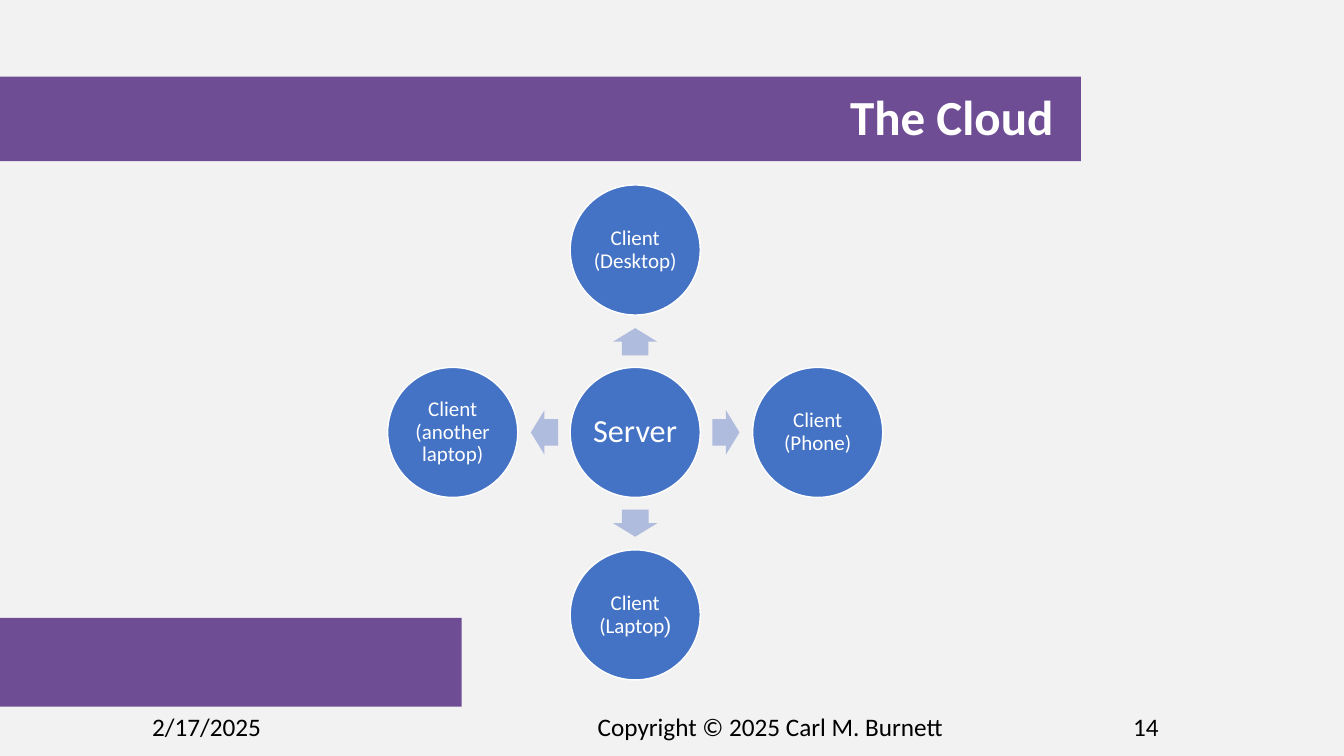
import math
import pptx
import pptx.util
import pptx.dml.color
import pptx.enum.shapes
import pptx.enum.text

Inches = pptx.util.Inches
Pt = pptx.util.Pt
Kind = pptx.enum.shapes.MSO_SHAPE
Align = pptx.enum.text.PP_ALIGN
Anchor = pptx.enum.text.MSO_ANCHOR
hues = {"back": "F2F2F2", "band": "6E4D94", "disc": "4472C4",
        "arrow": "B0BCDE", "white": "FFFFFF", "black": "000000"}


def draw(kind, x, y, w, h, hue):
    shape = slide.shapes.add_shape(kind, Inches(x), Inches(y), Inches(w), Inches(h))
    shape.shadow.inherit = False
    shape.fill.solid()
    shape.fill.fore_color.rgb = pptx.dml.color.RGBColor.from_string(hues[hue])
    shape.line.fill.background()
    return shape


def write(para, text, size, hue, face="Calibri"):
    run = para.add_run()
    run.text = text
    run.font.size = Pt(size)
    run.font.name = face
    run.font.color.rgb = pptx.dml.color.RGBColor.from_string(hues[hue])
    return run


deck = pptx.Presentation()
deck.slide_width, deck.slide_height = Inches(13.33), Inches(7.5)
slide = deck.slides.add_slide(deck.slide_layouts[5])
slide.background.fill.solid()
slide.background.fill.fore_color.rgb = pptx.dml.color.RGBColor.from_string(hues["back"])

# Bands and title
draw(Kind.RECTANGLE, 0, 6.13, 4.58, 0.88, "band")
band = draw(Kind.RECTANGLE, 0, 0.76, 10.72, 0.84, "band")
title = slide.shapes.title
band._element.addnext(title._element)
title.left, title.top = Inches(1.72), Inches(0.89)
title.width, title.height = Inches(8.83), Inches(0.59)
frame = title.text_frame
frame.auto_size = pptx.enum.text.MSO_AUTO_SIZE.NONE
frame.vertical_anchor = Anchor.MIDDLE
para = frame.paragraphs[0]
para.alignment = Align.RIGHT
para.line_spacing = 0.9
write(para, "The Cloud", 35, "white").font.bold = True

# Footer
for x, w, text in [(1.41, 1.6, "2/17/2025"),
                   (5.83, 3.89, "Copyright © 2025 Carl M. Burnett"),
                   (11.14, 1.6, "14")]:
    box = slide.shapes.add_textbox(Inches(x), Inches(7.01), Inches(w), Inches(0.4))
    box.text_frame.word_wrap = True
    write(box.text_frame.paragraphs[0], text, 18, "black")

# Server in the middle, clients around it: angle (None for the hub), size, runs
mid_x, mid_y = 6.3, 4.29
disc, reach, gap = 1.29, 1.81, 0.9
long, wide = 0.27, 0.44
nodes = [
    (None, 23, [("Server", "Calibri")]),
    (270, 15, [("Client (Desktop)", "Calibri")]),
    (0, 15, [("Client (Phone)", "Calibri")]),
    (90, 15, [("Client (Laptop", "Calibri"), (")", "Roboto Slab")]),
    (180, 15, [("Client (another laptop)", "Calibri")]),
]
for angle, size, runs in nodes:
    x, y = mid_x, mid_y
    if angle is not None:
        dx, dy = math.cos(math.radians(angle)), math.sin(math.radians(angle))
        arrow = draw(Kind.RIGHT_ARROW, x + gap * dx - long / 2,
                     y + gap * dy - wide / 2, long, wide, "arrow")
        arrow.adjustments[0] = 0.6
        arrow.adjustments[1] = 0.5
        arrow.rotation = angle
        x, y = x + reach * dx, y + reach * dy
    node = draw(Kind.OVAL, x - disc / 2, y - disc / 2, disc, disc, "disc")
    node.line.color.rgb = pptx.dml.color.RGBColor.from_string(hues["white"])
    node.line.width = Pt(1)
    frame = node.text_frame
    frame.word_wrap = True
    frame.vertical_anchor = Anchor.MIDDLE
    frame.margin_left = frame.margin_right = Inches(0.02)
    frame.margin_top = frame.margin_bottom = Inches(0.02)
    para = frame.paragraphs[0]
    para.alignment = Align.CENTER
    para.line_spacing = 0.9
    for text, face in runs:
        write(para, text, size, "white", face)

deck.save("out.pptx")
